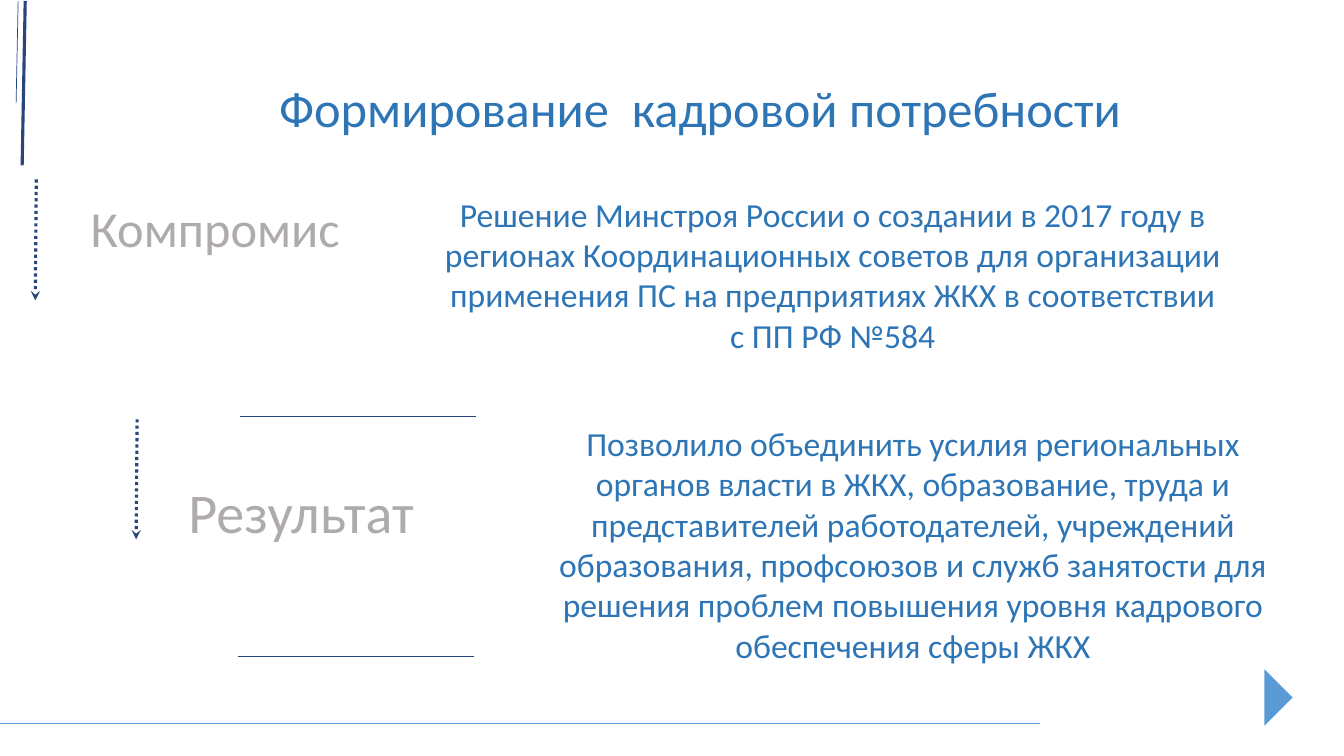
from dataclasses import dataclass

from lxml import etree
from pptx import Presentation
from pptx import util as u
from pptx.dml.color import RGBColor
from pptx.enum import dml, shapes, text
from pptx.oxml import ns

FONT = "Calibri"
COLORS = {"navy": "28467C", "blue": "2E75B6", "sky": "5B9BD5", "gray": "AFABAB"}


@dataclass
class Line:
    start: tuple[float, float]
    end: tuple[float, float]
    width: float = 0.5
    color: str = "navy"
    dotted_arrow: bool = False


@dataclass
class Label:
    words: str
    box: tuple[float, float, float, float]
    size: int
    color: str = "blue"
    centered: bool = True


LINES = [
    Line((0.25, 0.01), (0.22, 1.64), 2.25),
    Line((0.18, 0.01), (0.16, 1.02)),
    Line((0.36, 1.78), (0.35, 2.98), 2.25, dotted_arrow=True),
    Line((1.36, 4.16), (1.35, 5.35), 2.25, dotted_arrow=True),
    Line((2.38, 4.13), (4.72, 4.13)),
    Line((2.36, 6.51), (4.7, 6.51)),
    Line((0, 7.18), (10.32, 7.18), color="sky"),
]

TITLE = Label("Формирование  кадровой потребности", (1.51, 0.48, 10.87, 1.17), 36)

LABELS = [
    Label("Компромис", (0.8, 1.91, 2.79, 0.71), 36, "gray", centered=False),
    Label("Результат", (1.77, 4.69, 3.2, 0.77), 40, "gray", centered=False),
    Label(
        "Позволило объединить усилия региональных органов власти в ЖКХ, "
        "образование, труда и представителей работодателей, учреждений "
        "образования, профсоюзов и служб занятости для решения проблем "
        "повышения уровня кадрового обеспечения сферы ЖКХ",
        (5.29, 3.93, 7.53, 2.93), 24,
    ),
    Label(
        "Решение Минстроя России о создании в 2017 году в регионах "
        "Координационных советов для организации применения ПС на "
        "предприятиях ЖКХ в соответствии с ПП РФ №584",
        (4.28, 1.86, 7.96, 1.72), 24,
    ),
]


def rgb(name: str) -> RGBColor:
    return RGBColor.from_string(COLORS[name])


def draw_line(slide, line: Line) -> None:
    points = [u.Inches(value) for value in (*line.start, *line.end)]
    connector = slide.shapes.add_connector(shapes.MSO_CONNECTOR.STRAIGHT, *points)
    connector.line.color.rgb = rgb(line.color)
    connector.line.width = u.Pt(line.width)
    if line.dotted_arrow:
        connector.line.dash_style = dml.MSO_LINE.ROUND_DOT
        outline = connector.line._get_or_add_ln()
        etree.SubElement(outline, ns.qn("a:tailEnd"), type="stealth")
    etree.SubElement(connector._element.spPr, ns.qn("a:effectLst"))


def write_label(shape, label: Label) -> None:
    """Place a text box or placeholder and fill it with the label's text."""
    shape.left, shape.top, shape.width, shape.height = map(u.Inches, label.box)
    frame = shape.text_frame
    frame.text = label.words
    frame.word_wrap = True
    frame.auto_size = text.MSO_AUTO_SIZE.NONE
    frame.vertical_anchor = (
        text.MSO_ANCHOR.MIDDLE if label.centered else text.MSO_ANCHOR.TOP
    )
    paragraph = frame.paragraphs[0]
    paragraph.alignment = text.PP_ALIGN.CENTER if label.centered else text.PP_ALIGN.LEFT
    paragraph.font.name = FONT
    paragraph.font.size = u.Pt(label.size)
    paragraph.font.color.rgb = rgb(label.color)


def draw_corner_triangle(slide) -> None:
    triangle = slide.shapes.add_shape(
        shapes.MSO_SHAPE.ISOSCELES_TRIANGLE,
        u.Inches(12.4), u.Inches(6.78), u.Inches(0.56), u.Inches(0.28),
    )
    triangle.rotation = 90
    triangle.shadow.inherit = False
    triangle.fill.solid()
    triangle.fill.fore_color.rgb = rgb("sky")
    triangle.line.fill.background()


def main() -> None:
    presentation = Presentation()
    presentation.slide_width = u.Inches(13.33)
    presentation.slide_height = u.Inches(7.5)
    title_only = presentation.slide_layouts.get_by_name("Title Only")
    slide = presentation.slides.add_slide(title_only)

    for line in LINES:
        draw_line(slide, line)
    write_label(slide.shapes.title, TITLE)
    for label in LABELS:
        box = slide.shapes.add_textbox(*map(u.Inches, label.box))
        write_label(box, label)
    draw_corner_triangle(slide)

    presentation.save("out.pptx")


if __name__ == "__main__":
    main()
